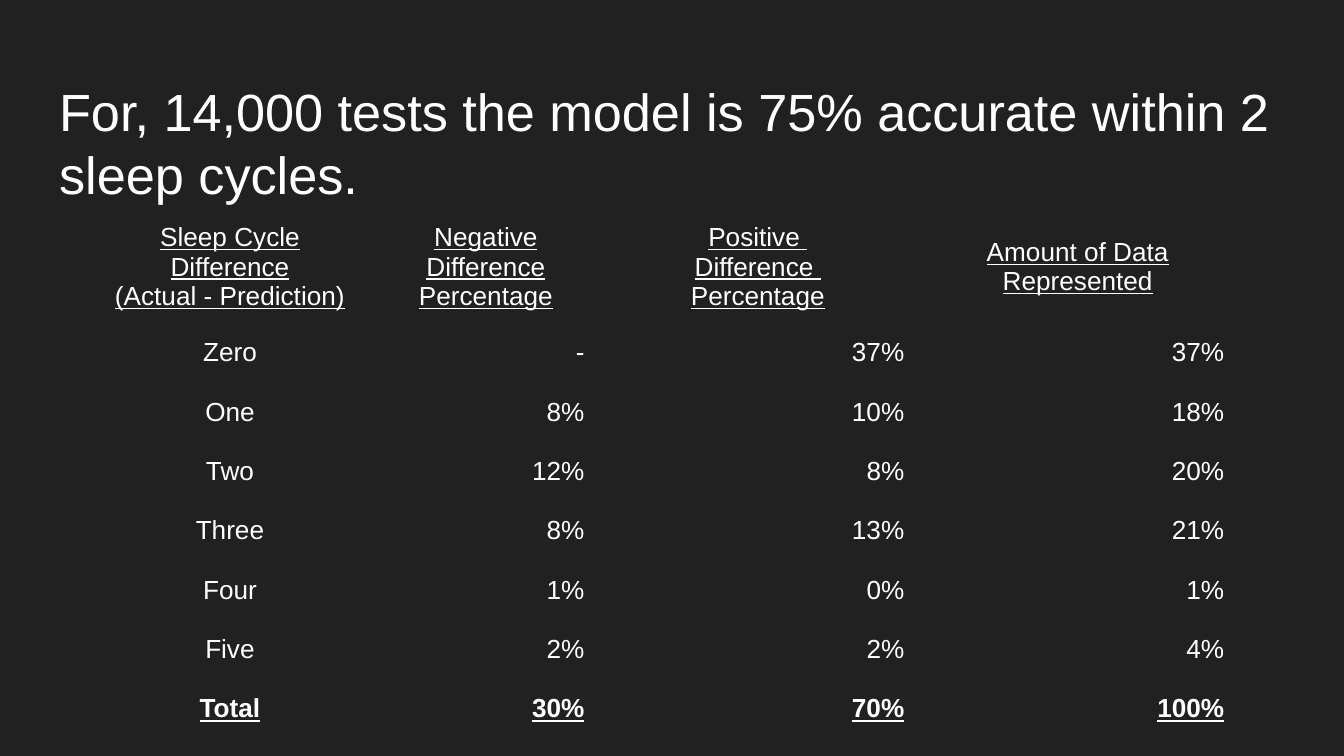
from dataclasses import dataclass

from pptx import Presentation
from pptx.dml.color import RGBColor as Color
from pptx.enum.text import MSO_ANCHOR as Anchor, PP_ALIGN as Align
from pptx.oxml.ns import qn
from pptx.util import Inches, Pt


@dataclass(frozen=True)
class Theme:
    back: str = "212121"
    ink: str = "FFFFFF"
    font: str = "Arial"
    title: int = 28
    body: int = 14
    inset: float = 0.1
    plain: str = "{2D5ABB26-0587-4C30-8999-92F81FD0307C}"  # no style, no grid


THEME = Theme()
WIDE = 10
HIGH = WIDE * 9 / 16

# Boxes: left, top, width, height as shares of the slide
TITLE_BOX = (0.034, 0.087, 0.932, 0.19)
TABLE_BOX = (0.064, 0.277, 0.857, 0.671)

# Table grid: relative column widths and row heights
COLS = (9, 7, 10, 10)
HEAD_ROW, BODY_ROW = 1.54, 1

TITLE = "For, 14,000 tests the model is 75% accurate within 2 sleep cycles."
HEADS = (
    "Sleep Cycle Difference\n(Actual - Prediction)",
    "Negative Difference\nPercentage",
    "Positive \nDifference \nPercentage",
    "Amount of Data Represented",
)
ROWS = (
    ("Zero", "-", "37%", "37%"),
    ("One", "8%", "10%", "18%"),
    ("Two", "12%", "8%", "20%"),
    ("Three", "8%", "13%", "21%"),
    ("Four", "1%", "0%", "1%"),
    ("Five", "2%", "2%", "4%"),
    ("Total", "30%", "70%", "100%"),
)


def scale(box):
    """Turn shares of the slide into lengths."""
    return [Inches(share * side) for share, side in zip(box, (WIDE, HIGH) * 2)]


def write(frame, text, size=THEME.body, align=Align.LEFT, bold=False, line=False):
    """Fill a text frame, one paragraph for each line of text."""
    frame.text = text
    for para in frame.paragraphs:
        para.alignment = align
        for run in para.runs:
            font = run.font
            font.name, font.size = THEME.font, Pt(size)
            font.bold, font.underline = bold, line
            font.color.rgb = Color.from_string(THEME.ink)


def pad(part):
    """Give a cell or text frame equal insets on all sides."""
    part.margin_left = part.margin_right = Inches(THEME.inset)
    part.margin_top = part.margin_bottom = Inches(THEME.inset)


def add_title(slide, box):
    shape = slide.shapes.title
    shape.left, shape.top, shape.width, shape.height = scale(box)
    frame = shape.text_frame
    frame.word_wrap = True
    frame.vertical_anchor = Anchor.TOP
    pad(frame)
    write(frame, TITLE, size=THEME.title)


def add_grid(slide, box):
    left, top, width, height = scale(box)
    data = (HEADS, *ROWS)
    table = slide.shapes.add_table(
        len(data), len(COLS), left, top, width, height).table
    table.first_row = table.horz_banding = False
    table._tbl.tblPr.find(qn("a:tableStyleId")).text = THEME.plain

    # Column widths and row heights
    for col, part in zip(table.columns, COLS):
        col.width = int(width * part / sum(COLS))
    parts = [HEAD_ROW] + [BODY_ROW] * len(ROWS)
    for row, part in zip(table.rows, parts):
        row.height = int(height * part / sum(parts))

    # Cells: underlined heads, centred labels, right-aligned values, bold total
    for r, texts in enumerate(data):
        head, total = r == 0, r == len(ROWS)
        for c, text in enumerate(texts):
            cell = table.cell(r, c)
            cell.fill.background()
            cell.vertical_anchor = Anchor.MIDDLE if head else Anchor.TOP
            pad(cell)
            write(cell.text_frame, text, bold=total, line=head or total,
                  align=Align.CENTER if head or c == 0 else Align.RIGHT)


def main():
    deck = Presentation()
    deck.slide_width, deck.slide_height = Inches(WIDE), Inches(HIGH)
    slide = deck.slides.add_slide(deck.slide_layouts[5])
    fill = slide.background.fill
    fill.solid()
    fill.fore_color.rgb = Color.from_string(THEME.back)
    add_title(slide, TITLE_BOX)
    add_grid(slide, TABLE_BOX)
    deck.save("out.pptx")


if __name__ == "__main__":
    main()
